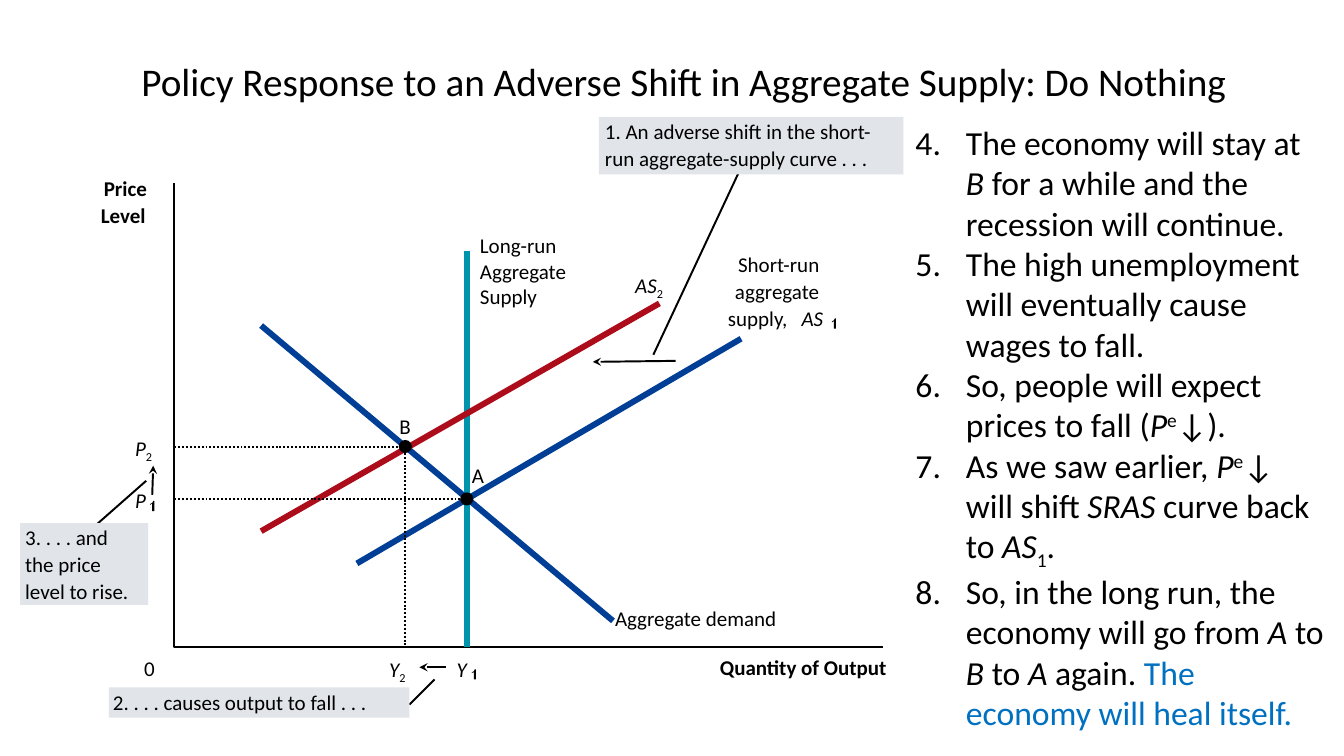
"""Build a slide on leaving an adverse aggregate-supply shift alone."""
from dataclasses import dataclass

from lxml.etree import SubElement
from pptx import Presentation
from pptx.dml.color import RGBColor
from pptx.enum.dml import MSO_LINE_DASH_STYLE as Dash
from pptx.enum.shapes import MSO_CONNECTOR as Connector, MSO_SHAPE as Shape
from pptx.enum.text import MSO_ANCHOR as Anchor, MSO_AUTO_SIZE as AutoSize, PP_ALIGN as Align
from pptx.oxml.ns import qn
from pptx.util import Inches, Pt


@dataclass(frozen=True)
class Theme:
    """Colours, font, type sizes and line widths."""
    font: str = "Calibri"
    ink: str = "000000"
    panel: str = "E1E5E9"
    blue: str = "003F95"
    teal: str = "0094AC"
    red: str = "AD0D1B"
    accent: str = "0070C0"
    title: int = 28
    body: int = 24
    label: int = 15
    thin: float = 1.38
    thick: float = 4.25


THEME = Theme()
TITLE = "Policy Response to an Adverse Shift in Aggregate Supply: Do Nothing"
FIRST_NUMBER = 4
POINTS = [
    [("The economy will stay at ", ""), ("B", "italic"),
     (" for a while and the recession will continue.", "")],
    [("The high unemployment will eventually cause wages to fall.", "")],
    [("So, people will expect prices to fall (", ""), ("P", "italic"), ("e", "super"), ("↓).", "")],
    [("As we saw earlier, ", ""), ("P", "italic"), ("e", "super"), ("↓ will shift ", ""),
     ("SRAS ", "italic"), ("curve back to ", ""), ("AS", "italic"), ("1", "sub"), (".", "")],
    [("So, in the long run, the economy will go from ", ""), ("A", "italic"), (" to ", ""),
     ("B", "italic"), (" to ", ""), ("A", "italic"), (" again. ", ""),
     ("The economy will heal itself.", "accent")],
]

ORIGIN, AXIS_TOP, AXIS_RIGHT = (1.73, 6.42), 1.82, 8.76
POINT_A, POINT_B = (4.63, 4.95), (4.02, 4.43)
DOT = 0.13
CURVES = [
    ((POINT_A[0], 2.49), (POINT_A[0], ORIGIN[1]), THEME.teal),
    ((6.08, 6.16), (2.59, 3.23), THEME.blue),
    ((3.54, 5.59), (7.35, 3.36), THEME.blue),
    ((2.59, 5.27), (6.54, 3.01), THEME.red),
]
ARROWS = [((6.7, 3.58), (5.88, 3.59)), ((4.42, 6.62), (4.16, 6.62)), ((1.51, 4.91), (1.52, 4.62))]
LEADERS = [((1.45, 4.77), (0.86, 5.29)), ((4.31, 6.74), (4.06, 6.99)), ((6.48, 3.52), (7.37, 1.62))]
PANELS = [(0.2, 5.19, 1.27, 0.81), (1.08, 6.82, 2.98, 0.3), (5.94, 1.16, 3.02, 0.57)]
LABELS = [
    (7.14, 6.49, 1.67, [("Quantity of Output", "bold")]),
    (1.03, 1.74, 0.43, [("Price", "bold")]),
    (1, 2.01, 0.45, [("Level", "bold")]),
    (1.43, 6.5, 0.11, [("0", "")]),
    (6.1, 6.01, 1.61, [("Aggregate demand", "")]),
    (0.25, 5.2, 0.88, [("3. . . . and", "")]),
    (0.25, 5.47, 0.81, [("the price", "")]),
    (0.25, 5.74, 1.04, [("level to rise.", "")]),
    (1.12, 6.84, 2.54, [("2. . . . causes output to fall . . .", "")]),
    (6, 1.18, 2.68, [("1. An adverse shift in the short-", "")]),
    (6, 1.44, 2.62, [("run aggregate-supply curve . . .", "")]),
    (7.32, 2.5, 0.82, [("Short-run", "")]),
    (7.29, 2.76, 0.84, [("aggregate", "")]),
    (7.22, 3.03, 0.64, [("supply,", "")]),
    (7.95, 3.03, 0.22, [("AS", "italic")]),
    (4.76, 2.31, 0.86, [("Long-run\nAggregate\nSupply", "")]),
    (4.53, 6.51, 0.1, [("Y", "italic")]),
    (4.68, 4.59, 0.12, [("A", "")]),
    (1.34, 4.84, 0.11, [("P", "italic")]),
    (6.3, 2.7, 0.29, [("AS", "italic"), ("2", "sub")]),
    (3.96, 4.1, 0.11, [("B", "")]),
    (3.86, 6.51, 0.17, [("Y", "italic"), ("2", "sub")]),
    (1.34, 4.32, 0.18, [("P", "italic"), ("2", "sub")]),
]
LINE_HEIGHT = 0.25
SMALL_ONES = [(8.25, 3.16), (4.68, 6.64), (1.49, 4.97)]
ONE_OUTLINE = [(0.04, 0), (0.03, 0), (0.02, 0.02), (0, 0.03), (0, 0.04),
               (0.01, 0.03), (0.02, 0.03), (0.02, 0.1), (0.04, 0.1)]


def inches(values):
    return [Inches(value) for value in values]


def write(para, pieces, size):
    for text, style in pieces:
        for index, line in enumerate(text.split("\n")):
            if index:
                para.add_line_break()
            span = para.add_run()
            span.text = line
            font = span.font
            font.name, font.size = THEME.font, Pt(size)
            font.bold, font.italic = style == "bold", style == "italic"
            font.color.rgb = RGBColor.from_string(THEME.accent if style == "accent" else THEME.ink)
            if style in ("super", "sub"):
                span._r.get_or_add_rPr().set("baseline", "30000" if style == "super" else "-25000")


def ink_line(line, color=THEME.ink, width=THEME.thin, dotted=False):
    line.color.rgb = RGBColor.from_string(color)
    line.width = Pt(width)
    if dotted:
        line.dash_style = Dash.ROUND_DOT


def add_line(page, start, end, arrow=False, **look):
    line = page.shapes.add_connector(Connector.STRAIGHT, *inches(start + end))
    ink_line(line.line, **look)
    if arrow:
        SubElement(line.line._get_or_add_ln(), qn("a:tailEnd"), type="stealth")
    SubElement(line._element.spPr, qn("a:effectLst"))


def add_outline(page, points, close=False, dotted=False):
    corners = [tuple(inches(point)) for point in points]
    builder = page.shapes.build_freeform(*corners[0])
    builder.add_line_segments(corners[1:], close=close)
    outline = builder.convert_to_shape()
    outline.shadow.inherit = False
    if close:
        outline.fill.solid()
        outline.fill.fore_color.rgb = RGBColor.from_string(THEME.ink)
        outline.line.fill.background()
    else:
        outline.fill.background()
        ink_line(outline.line, dotted=dotted)


def add_filled(page, kind, place, color):
    shape = page.shapes.add_shape(kind, *inches(place))
    shape.shadow.inherit = False
    shape.fill.solid()
    shape.fill.fore_color.rgb = RGBColor.from_string(color)
    shape.line.fill.background()


def add_label(page, left, top, width, pieces):
    lines = 1 + sum(text.count("\n") for text, _ in pieces)
    box = page.shapes.add_textbox(*inches((left, top, width, lines * LINE_HEIGHT)))
    frame = box.text_frame
    frame.margin_left = frame.margin_right = frame.margin_top = frame.margin_bottom = 0
    frame.word_wrap = False
    write(frame.paragraphs[0], pieces, THEME.label)


def place_frame(holder, place, anchor):
    holder.left, holder.top, holder.width, holder.height = inches(place)
    frame = holder.text_frame
    frame.word_wrap, frame.auto_size, frame.vertical_anchor = True, AutoSize.NONE, anchor
    return frame


def fill_placeholders(page):
    para = place_frame(page.shapes.title, (0.67, 0.17, 12.22, 1.33), Anchor.MIDDLE).paragraphs[0]
    para.alignment, para.line_spacing = Align.CENTER, 0.9
    write(para, [(TITLE, "")], THEME.title)
    frame = place_frame(page.placeholders[1], (8.98, 1.16, 4.26, 6.16), Anchor.TOP)
    for index, pieces in enumerate(POINTS):
        para = frame.add_paragraph() if index else frame.paragraphs[0]
        para.space_before = Pt(0)
        props = para._p.get_or_add_pPr()
        props.set("marL", str(Inches(0.5)))
        props.set("indent", str(-Inches(0.5)))
        SubElement(props, qn("a:buFont"), typeface=THEME.font)
        SubElement(props, qn("a:buAutoNum"), type="arabicPeriod", startAt=str(FIRST_NUMBER))
        write(para, pieces, THEME.body)


def draw_graph(page):
    add_outline(page, [(ORIGIN[0], AXIS_TOP), ORIGIN, (AXIS_RIGHT, ORIGIN[1])])
    for start, end, color in CURVES:
        add_line(page, start, end, color=color, width=THEME.thick)
    add_line(page, (ORIGIN[0], POINT_A[1]), POINT_A, dotted=True)
    add_outline(page, [(ORIGIN[0], POINT_B[1]), POINT_B, (POINT_B[0], ORIGIN[1])], dotted=True)
    for start, end in ARROWS:
        add_line(page, start, end, arrow=True)
    for start, end in LEADERS:
        add_line(page, start, end)
    for place in PANELS:
        add_filled(page, Shape.RECTANGLE, place, THEME.panel)
    for x, y in (POINT_A, POINT_B):
        add_filled(page, Shape.OVAL, (x - DOT / 2, y - DOT / 2, DOT, DOT), THEME.ink)
    for label in LABELS:
        add_label(page, *label)
    for left, top in SMALL_ONES:
        add_outline(page, [(left + x, top + y) for x, y in ONE_OUTLINE], close=True)


def main():
    deck = Presentation()
    deck.slide_width, deck.slide_height = Inches(13.33), Inches(7.5)
    page = deck.slides.add_slide(deck.slide_layouts[1])
    fill_placeholders(page)
    draw_graph(page)
    deck.save("out.pptx")


if __name__ == "__main__":
    main()
